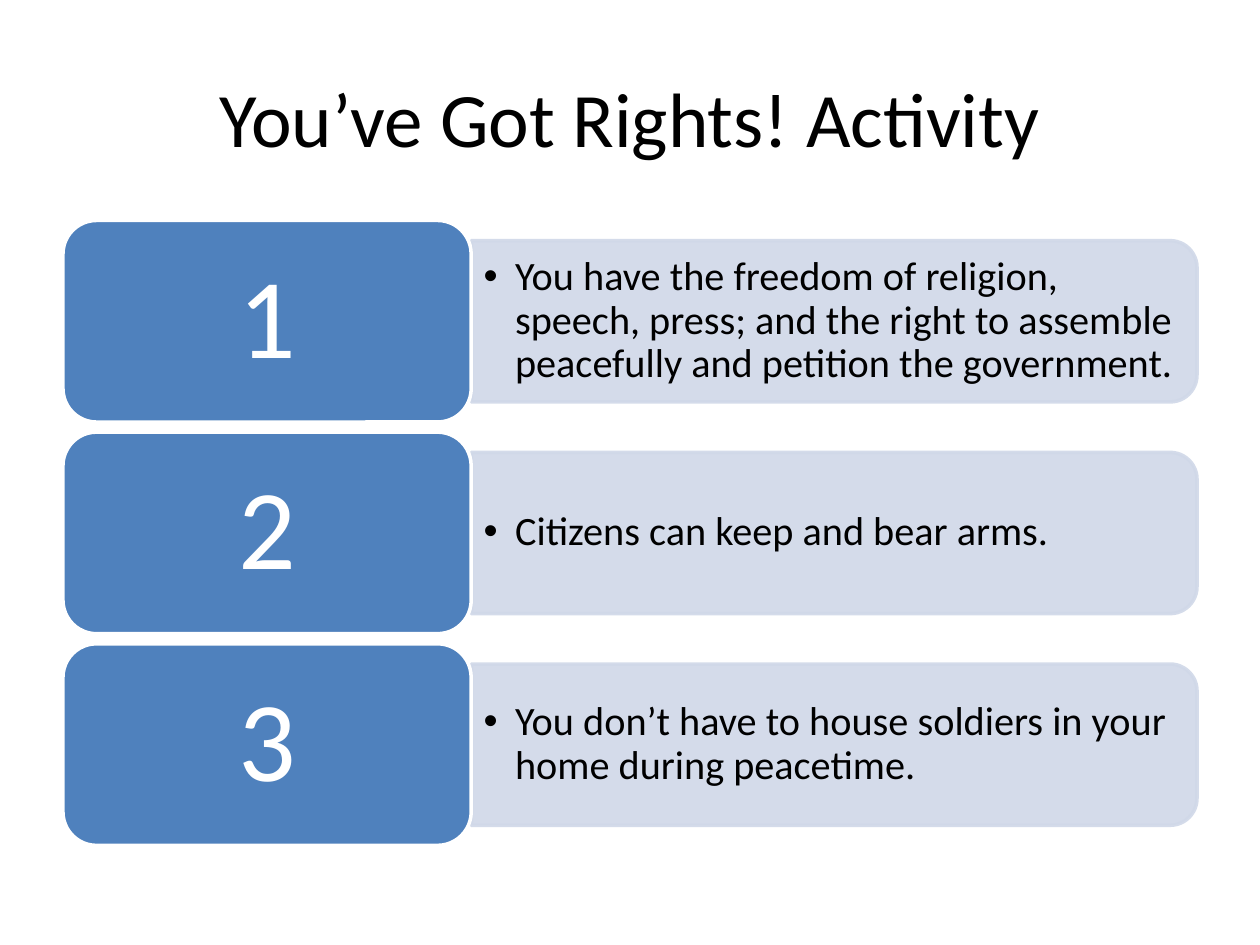
"""Build a slide that pairs three numbered tiles with the rights they stand for."""
from lxml.etree import SubElement
from pptx import Presentation
from pptx.dml.color import RGBColor
from pptx.enum.shapes import MSO_SHAPE
from pptx.enum.text import MSO_ANCHOR, PP_ALIGN
from pptx.oxml.ns import qn
from pptx.util import Inches, Pt

TITLE = "You’ve Got Rights! Activity"
RIGHTS = [
    ("1", "You have the freedom of religion, speech, press; and the right to assemble "
          "peacefully and petition the government."),
    ("2", "Citizens can keep and bear arms."),
    ("3", "You don’t have to house soldiers in your home during peacetime."),
]
COLORS = {"tile": "4F81BD", "panel": "D0D8E8", "white": "FFFFFF", "text": "000000"}
FONT = "Calibri"
PANEL_ALPHA = 90

SLIDE_W, SLIDE_H = 10, 7.5
MARGIN = 0.05 * SLIDE_W
CONTENT_W = SLIDE_W - 2 * MARGIN
TILE_W, TILE_H = 0.36 * CONTENT_W, 1.6
PANEL_W, PANEL_H = CONTENT_W - TILE_W, 0.8 * TILE_H
ROWS_TOP, ROW_GAP = 1.75, 0.05 * TILE_H
BODY_W, BODY_H = PANEL_W - 0.06, 0.9 * PANEL_H


def color(name):
    return RGBColor.from_string(COLORS[name])


def box(left, top, width, height):
    return [Inches(value) for value in (left, top, width, height)]


def write(frame, text, size, ink, align, insets=(0.1, 0.05), spacing=None):
    frame.word_wrap = True
    frame.vertical_anchor = MSO_ANCHOR.MIDDLE
    frame.margin_left = frame.margin_right = Inches(insets[0])
    frame.margin_top = frame.margin_bottom = Inches(insets[1])
    frame.text = text
    paragraph = frame.paragraphs[0]
    paragraph.alignment = align
    paragraph.line_spacing = spacing
    font = paragraph.runs[0].font
    font.name, font.size, font.color.rgb = FONT, Pt(size), color(ink)
    return paragraph


def add_block(slide, preset, bounds, fill, line):
    block = slide.shapes.add_shape(preset, *box(*bounds))
    block.shadow.inherit = False
    block.fill.solid()
    block.fill.fore_color.rgb = color(fill)
    block.line.color.rgb = color(line)
    block.line.width = Pt(2)
    return block


def add_panel(slide, left, middle):
    bounds = (left + (PANEL_W - PANEL_H) / 2, middle - PANEL_W / 2, PANEL_H, PANEL_W)
    panel = add_block(slide, MSO_SHAPE.ROUND_2_SAME_RECTANGLE, bounds, "panel", "panel")
    panel.rotation = 90
    for swatch in panel.element.spPr.iter(qn("a:srgbClr")):
        SubElement(swatch, qn("a:alpha"), val=str(PANEL_ALPHA * 1000))


def add_bullet(paragraph, indent):
    properties = paragraph._p.get_or_add_pPr()
    properties.set("marL", str(Inches(indent)))
    properties.set("indent", str(-Inches(indent)))
    SubElement(properties, qn("a:buFont"), typeface="Arial")
    SubElement(properties, qn("a:buChar"), char="•")


def add_right(slide, row, number, right):
    top = ROWS_TOP + row * (TILE_H + ROW_GAP)
    middle = top + TILE_H / 2
    body_left = MARGIN + TILE_W
    add_panel(slide, body_left, middle)
    body = slide.shapes.add_textbox(*box(body_left, middle - BODY_H / 2, BODY_W, BODY_H))
    add_bullet(write(body.text_frame, right, 23, "text", PP_ALIGN.LEFT, spacing=0.9), 0.25)
    tile = add_block(slide, MSO_SHAPE.ROUNDED_RECTANGLE,
                     (MARGIN, top, TILE_W, TILE_H), "tile", "white")
    write(tile.text_frame, number, 65, "white", PP_ALIGN.CENTER, (0.27, 0.14), 0.9)


def main():
    deck = Presentation()
    deck.slide_width, deck.slide_height = Inches(SLIDE_W), Inches(SLIDE_H)
    slide = deck.slides.add_slide(deck.slide_layouts[5])
    title = slide.shapes.title
    title.left, title.top, title.width, title.height = box(MARGIN, 0.3, CONTENT_W, 1.25)
    write(title.text_frame, TITLE, 44, "text", PP_ALIGN.CENTER)
    for row, (number, right) in enumerate(RIGHTS):
        add_right(slide, row, number, right)
    deck.save("out.pptx")


if __name__ == "__main__":
    main()
